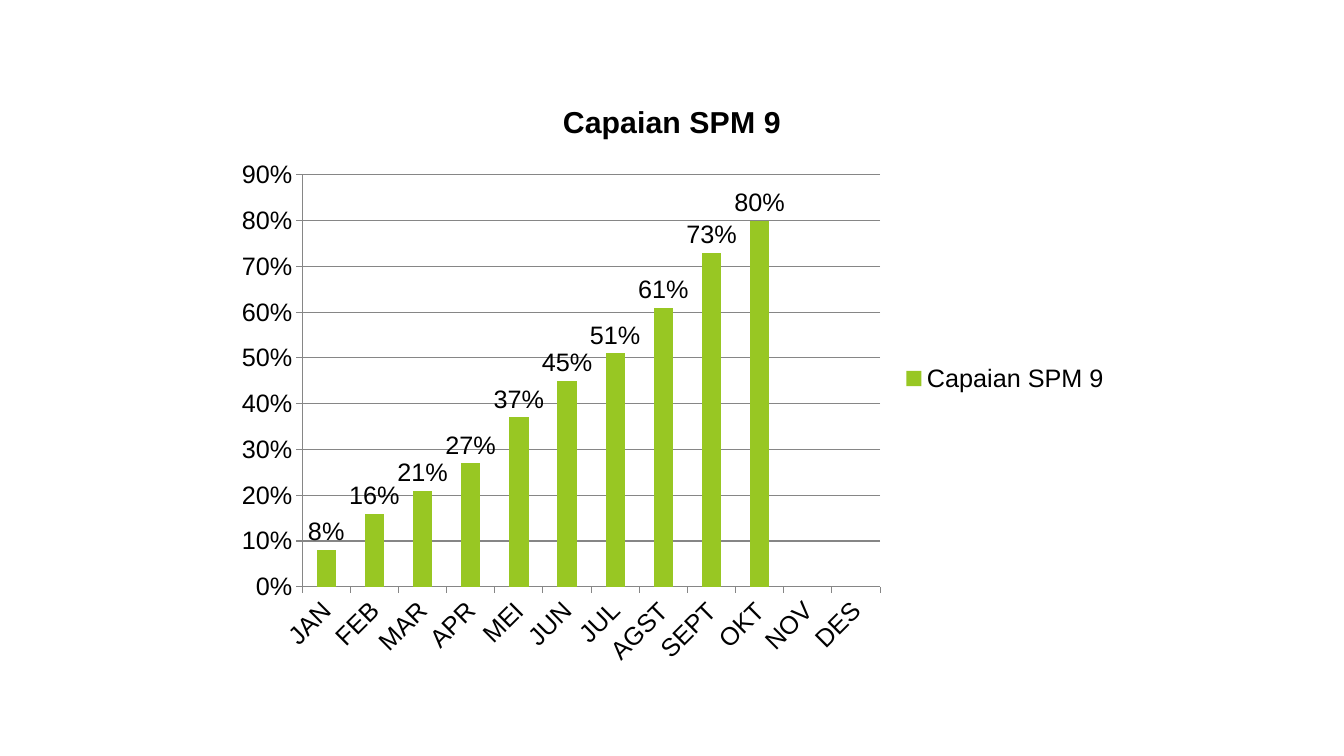
from pptx import Presentation
from pptx.chart.data import CategoryChartData
from pptx.dml.color import RGBColor
from pptx.enum.chart import XL_CHART_TYPE, XL_LABEL_POSITION, XL_LEGEND_POSITION, XL_TICK_MARK
from pptx.util import Inches, Pt

BLACK = RGBColor(0x00, 0x00, 0x00)
GRAY = RGBColor(0x86, 0x86, 0x86)
GREEN = RGBColor(0x98, 0xC7, 0x23)
FONT = "Arial"
PERCENT = "0%"

TITLE = "Capaian SPM 9"
MONTHS = ["JAN", "FEB", "MAR", "APR", "MEI", "JUN",
          "JUL", "AGST", "SEPT", "OKT", "NOV", "DES"]
ACHIEVED = [0.08, 0.16, 0.21, 0.27, 0.37, 0.45,
            0.51, 0.61, 0.73, 0.8, None, None]


def format_font(font, size=18, bold=False, color=BLACK):
    font.name = FONT
    font.size = Pt(size)
    font.bold = bold
    font.color.rgb = color


def write_text(tf, text, **font_format):
    r = tf.paragraphs[0].add_run()
    r.text = text
    format_font(r.font, **font_format)


def format_line(line):
    line.color.rgb = GRAY
    line.width = Pt(0.75)


def format_axis(axis):
    axis.major_tick_mark = XL_TICK_MARK.OUTSIDE
    axis.minor_tick_mark = XL_TICK_MARK.NONE
    format_line(axis.format.line)


def format_value_axis(axis):
    format_axis(axis)
    axis.minimum_scale = 0
    axis.maximum_scale = 0.9
    axis.major_unit = 0.1
    axis.has_major_gridlines = True
    format_line(axis.major_gridlines.format.line)
    axis.tick_labels.number_format = PERCENT
    axis.tick_labels.number_format_is_linked = False


def format_columns(plot):
    plot.gap_width = 150
    plot.vary_by_categories = False
    series = plot.series[0]
    series.format.fill.solid()
    series.format.fill.fore_color.rgb = GREEN
    labels = series.data_labels
    labels.show_value = True
    labels.number_format = PERCENT
    labels.number_format_is_linked = False
    labels.position = XL_LABEL_POSITION.OUTSIDE_END
    format_font(labels.font)


def add_column_chart(s, left, top, width, height):
    data = CategoryChartData(number_format=PERCENT)
    data.categories = MONTHS
    data.add_series(TITLE, ACHIEVED)
    chart = s.shapes.add_chart(XL_CHART_TYPE.COLUMN_CLUSTERED, Inches(left), Inches(top),
                               Inches(width), Inches(height), data).chart
    format_font(chart.font)
    chart.has_title = True
    write_text(chart.chart_title.text_frame, TITLE, size=21.6, bold=True)
    chart.chart_title.include_in_layout = False
    chart.has_legend = True
    chart.legend.position = XL_LEGEND_POSITION.RIGHT
    chart.legend.include_in_layout = False
    format_axis(chart.category_axis)
    format_value_axis(chart.value_axis)
    format_columns(chart.plots[0])


def main():
    prs = Presentation()
    prs.slide_width = Inches(13.33)
    prs.slide_height = Inches(7.5)
    s = prs.slides.add_slide(prs.slide_layouts[6])
    add_column_chart(s, 2.22, 0.79, 8.89, 5.93)
    prs.save("out.pptx")


if __name__ == "__main__":
    main()
